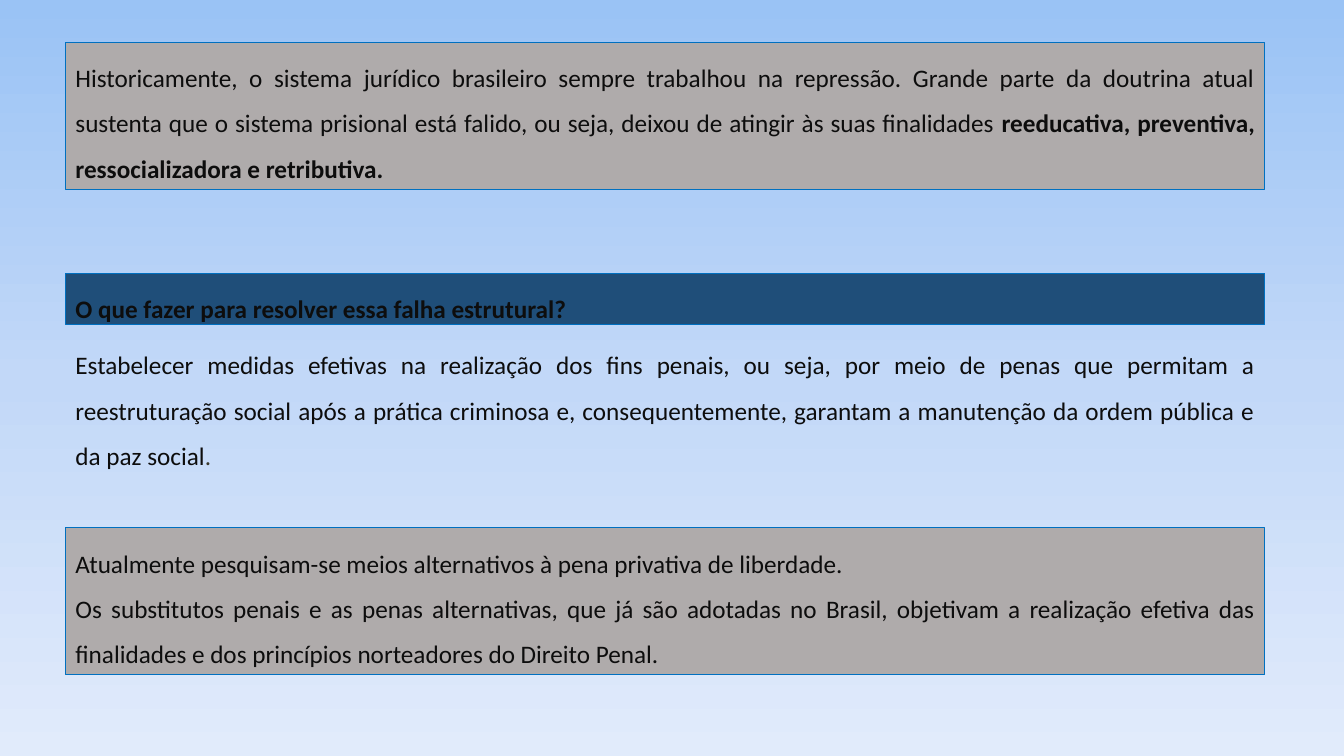
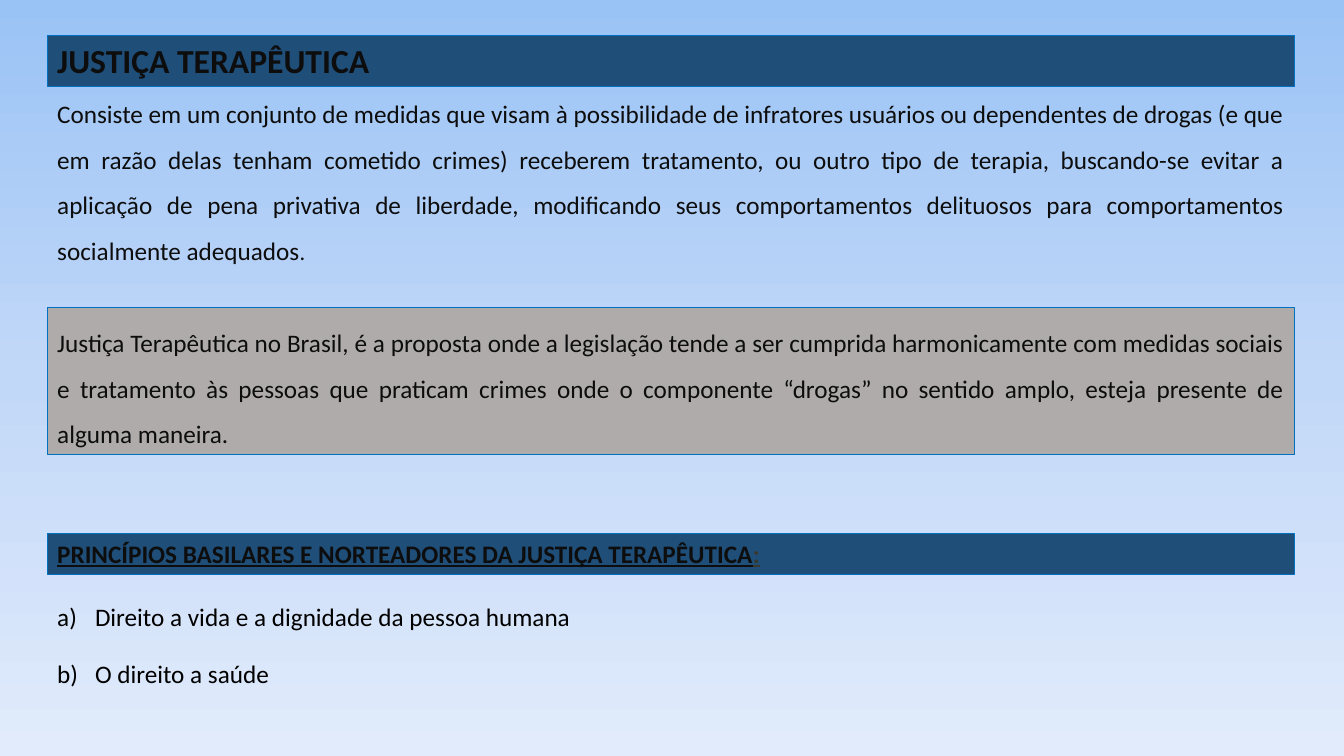
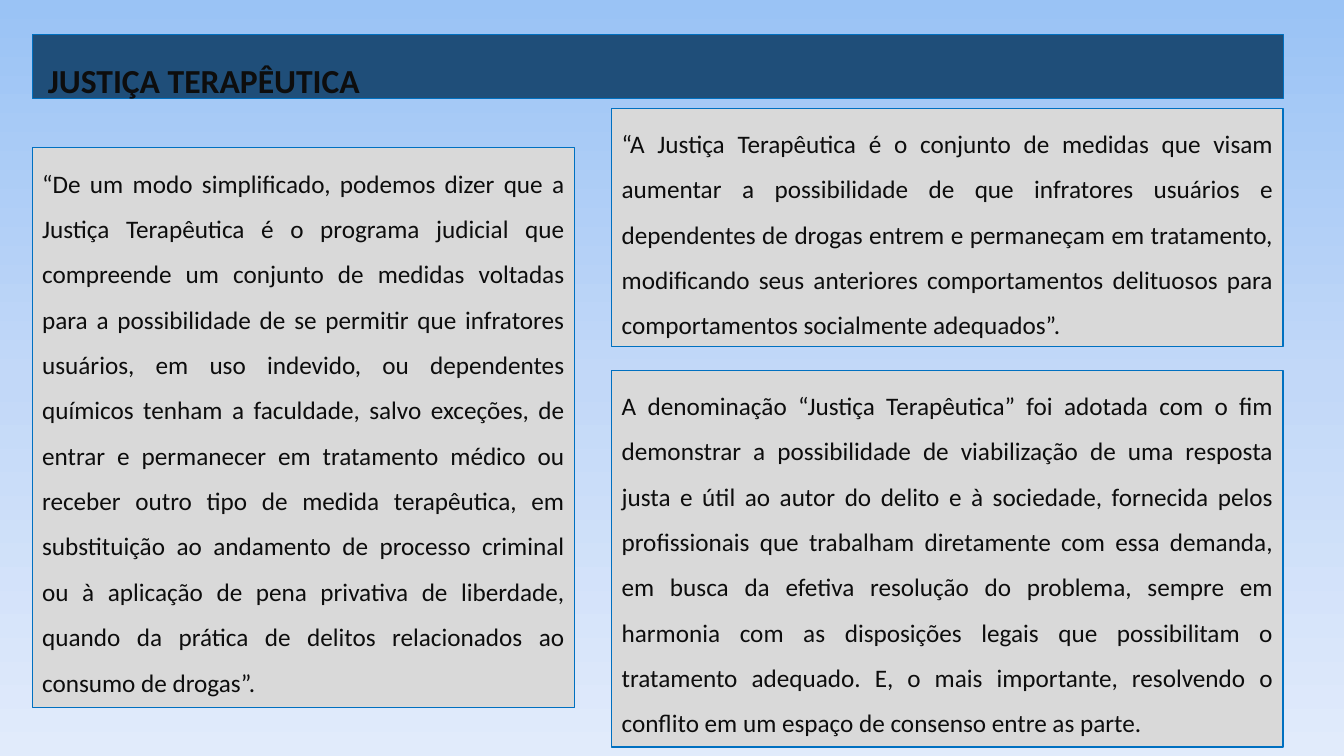
"""Build three slides about therapeutic justice."""
from copy import deepcopy

from lxml import etree
from pptx import Presentation
from pptx.dml.color import RGBColor
from pptx.enum.shapes import MSO_SHAPE
from pptx.enum.text import MSO_ANCHOR, MSO_AUTO_SIZE, PP_ALIGN
from pptx.oxml.ns import qn
from pptx.util import Pt

RECTANGLE = MSO_SHAPE.RECTANGLE
TOP = MSO_ANCHOR.TOP
GROW = MSO_AUTO_SIZE.SHAPE_TO_FIT_TEXT
LEFT = PP_ALIGN.LEFT
JUSTIFY = PP_ALIGN.JUSTIFY

NAVY = RGBColor(0x1F, 0x4E, 0x79)
GRAY = RGBColor(0xAF, 0xAB, 0xAB)
LIGHT_GRAY = RGBColor(0xD9, 0xD9, 0xD9)
BORDER = RGBColor(0x00, 0x70, 0xC0)
INK = RGBColor(0x0D, 0x0D, 0x0D)
BLACK = RGBColor(0x00, 0x00, 0x00)
OLIVE = RGBColor(0x3A, 0x38, 0x2C)
SKY_STOPS = [
    (0, RGBColor(0x9A, 0xC3, 0xF5)),
    (0.5, RGBColor(0xC2, 0xD8, 0xF8)),
    (1, RGBColor(0xE1, 0xEB, 0xFB)),
]


class Deck:
    def __init__(self):
        self.presentation = Presentation()
        self.presentation.slide_width = Pt(960)
        self.presentation.slide_height = Pt(540)
        self.slide = None
        self.paint_background()

    def paint_background(self):
        master = self.presentation.slide_master
        fill = master.background.fill
        fill.gradient()
        fill.gradient_angle = 270
        first_stop = master.element.find(".//" + qn("a:gs"))
        first_stop.addnext(deepcopy(first_stop))
        for stop, (position, color) in zip(fill.gradient_stops, SKY_STOPS):
            stop.position = position
            stop.color.rgb = color

    def add_slide(self):
        layout = self.presentation.slide_layouts[6]
        self.slide = self.presentation.slides.add_slide(layout)

    def panel(self, box, color, *paragraphs, **style):
        shape = self.slide.shapes.add_shape(RECTANGLE, *map(Pt, box))
        shape.shadow.inherit = False
        shape.fill.solid()
        shape.fill.fore_color.rgb = color
        shape.line.color.rgb = BORDER
        shape.line.width = Pt(0.75)
        self.add_paragraphs(shape, paragraphs, **style)

    def text(self, box, *paragraphs, **style):
        shape = self.slide.shapes.add_textbox(*map(Pt, box))
        self.add_paragraphs(shape, paragraphs, **style)

    def add_paragraphs(self, shape, paragraphs, align=JUSTIFY, spacing=1.5,
                       after=0, lettered=False):
        frame = shape.text_frame
        frame.word_wrap = True
        frame.auto_size = GROW
        frame.vertical_anchor = TOP
        for index, runs in enumerate(paragraphs):
            paragraph = frame.add_paragraph() if index else frame.paragraphs[0]
            paragraph.alignment = align
            paragraph.line_spacing = spacing
            paragraph.space_after = Pt(after)
            if lettered:
                self.add_letter(paragraph)
            for run in runs:
                self.add_run(paragraph, **run)

    def add_letter(self, paragraph):
        properties = paragraph._p.get_or_add_pPr()
        properties.set("marL", str(Pt(27)))
        properties.set("indent", str(-Pt(27)))
        numbering = etree.SubElement(properties, qn("a:buAutoNum"))
        numbering.set("type", "alphaLcParenR")

    def add_run(self, paragraph, text, size=18, color=INK, bold=False,
                underline=False):
        run = paragraph.add_run()
        run.text = text
        run.font.name = "Calibri"
        run.font.size = Pt(size)
        run.font.color.rgb = color
        run.font.bold = bold
        run.font.underline = underline


def words(text, **style):
    return {"text": text, **style}


def build_reform_slide(deck):
    left, width, panel_height = 46.8, 856.8, 105.1
    deck.add_slide()
    deck.panel(
        (left, 30.2, width, panel_height), GRAY,
        [words("Historicamente, o sistema jurídico brasileiro sempre trabalhou na "
               "repressão. Grande parte da doutrina atual sustenta que o sistema "
               "prisional está falido, ou seja, deixou de atingir às suas finalidades "),
         words("reeducativa, preventiva, ressocializadora e retributiva.", bold=True)])
    deck.text(
        (left, 235.4, width, panel_height),
        [words("Estabelecer medidas efetivas na realização dos fins penais, ou seja, "
               "por meio de penas que permitam a reestruturação social após a prática "
               "criminosa e, consequentemente, garantam a manutenção da ordem pública "
               "e da paz social"),
         words(".", color=OLIVE)])
    deck.panel(
        (left, 195.3, width, 36.5), NAVY,
        [words("O que fazer para resolver essa falha estrutural?", bold=True)])
    deck.panel(
        (left, 377, width, panel_height), GRAY,
        [words("Atualmente pesquisam-se meios alternativos à pena privativa de "
               "liberdade.")],
        [words("Os substitutos penais e as penas alternativas, que já são adotadas no "
               "Brasil, objetivam a realização efetiva das finalidades e dos princípios "
               "norteadores do Direito Penal.")])


def build_principles_slide(deck):
    left, width = 33.8, 890.6
    deck.add_slide()
    deck.panel(
        (left, 219.6, width, 105.1), GRAY,
        [words("Justiça Terapêutica no Brasil, é a proposta onde a legislação tende a "
               "ser cumprida harmonicamente com medidas sociais e tratamento às pessoas "
               "que praticam crimes onde o componente “drogas” no sentido amplo, esteja "
               "presente de alguma maneira.")])
    deck.panel(
        (left, 25.2, width, 36.4), NAVY,
        [words("JUSTIÇA TERAPÊUTICA", size=24, bold=True)],
        align=LEFT, spacing=1)
    deck.text(
        (left, 56.2, width, 138.2),
        [words("Consiste em um conjunto de medidas que visam à possibilidade de "
               "infratores usuários ou dependentes de drogas (e que em razão delas "
               "tenham cometido crimes) receberem tratamento, ou outro tipo de terapia, "
               "buscando-se evitar a aplicação de pena privativa de liberdade, "
               "modificando seus comportamentos delituosos para comportamentos "
               "socialmente adequados"),
         words(".", size=16)],
        after=8)
    deck.text(
        (left, 415.4, width, 80.6),
        [words("Direito a vida e a dignidade da pessoa humana", color=BLACK)],
        [words("O direito a saúde", color=BLACK)],
        after=8, lettered=True)
    deck.panel(
        (left, 381, width, 29.1), NAVY,
        [words("PRINCÍPIOS BASILARES E NORTEADORES DA JUSTIÇA TERAPÊUTICA",
               bold=True, underline=True),
         words(":", color=OLIVE, bold=True, underline=True)],
        align=LEFT, spacing=1)


def build_definitions_slide(deck):
    left, right_column, right_width = 23, 437, 479.5
    deck.add_slide()
    deck.panel(
        (left, 24.6, right_column + right_width - left, 45.8), NAVY,
        [words(" ", color=BLACK, bold=True),
         words("JUSTIÇA TERAPÊUTICA", size=24, bold=True)],
        after=8)
    deck.panel(
        (left, 105.6, 387.4, 399.8), LIGHT_GRAY,
        [words("“De um modo simplificado, podemos dizer que a Justiça Terapêutica é o "
               "programa judicial que compreende um conjunto de medidas voltadas para a "
               "possibilidade de se permitir que infratores usuários, em uso indevido, "
               "ou dependentes químicos tenham a faculdade, salvo exceções, de entrar e "
               "permanecer em tratamento médico ou receber outro tipo de medida "
               "terapêutica, em substituição ao andamento de processo criminal ou à "
               "aplicação de pena privativa de liberdade, quando da prática de delitos "
               "relacionados ao consumo de drogas”.")],
        after=8)
    deck.panel(
        (right_column, 77.2, right_width, 170.6), LIGHT_GRAY,
        [words("“A Justiça Terapêutica é o conjunto de medidas que visam aumentar a "
               "possibilidade de que infratores usuários e dependentes de drogas entrem "
               "e permaneçam em tratamento, modificando seus anteriores comportamentos "
               "delituosos para comportamentos socialmente adequados”.")])
    deck.panel(
        (right_column, 264.4, right_width, 269.2), LIGHT_GRAY,
        [words("A denominação “Justiça Terapêutica” foi adotada com o fim demonstrar a "
               "possibilidade de viabilização de uma resposta justa e útil ao autor do "
               "delito e à sociedade, fornecida pelos profissionais que trabalham "
               "diretamente com essa demanda, em busca da efetiva resolução do problema, "
               "sempre em harmonia com as disposições legais que possibilitam o "
               "tratamento adequado. E, o mais importante, resolvendo o conflito em um "
               "espaço de consenso entre as parte.")])


def main():
    deck = Deck()
    build_reform_slide(deck)
    build_principles_slide(deck)
    build_definitions_slide(deck)
    deck.presentation.save("out.pptx")


if __name__ == "__main__":
    main()
